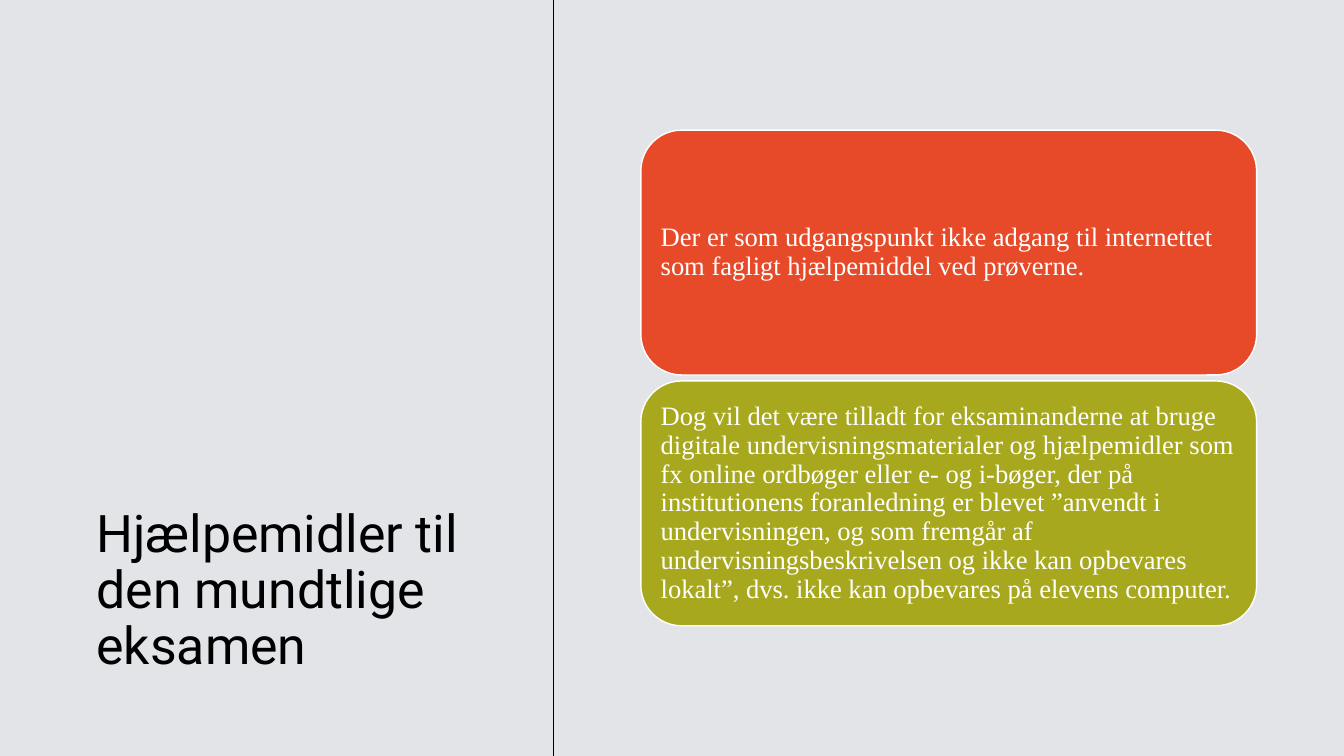
import pptx
import pptx.dml.color
import pptx.enum.shapes
import pptx.enum.text
import pptx.oxml.ns
import pptx.util
from lxml import etree
from pptx.util import Cm

COLOURS = {
    "background": "E2E4E8",
    "title": "000000",
    "divider": "000000",
    "rule": "E74A29",
    "exception": "A7A81E",
    "light": "FFFFFF",
}

STATEMENTS = [
    ("rule", "Der er som udgangspunkt ikke adgang til internettet som fagligt "
             "hjælpemiddel ved prøverne."),
    ("exception", "Dog vil det være tilladt for eksaminanderne at bruge digitale "
                  "undervisningsmaterialer og hjælpemidler som fx online ordbøger "
                  "eller e- og i-bøger, der på institutionens foranledning er blevet "
                  "”anvendt i undervisningen, og som fremgår af "
                  "undervisningsbeskrivelsen og ikke kan opbevares lokalt”, dvs. "
                  "ikke kan opbevares på elevens computer."),
]

SLIDE_WIDTH, SLIDE_HEIGHT = Cm(33.87), Cm(19.05)
CARD_LEFT, CARD_TOP = Cm(16.15), Cm(3.28)
CARD_WIDTH, CARD_HEIGHT = Cm(15.52), Cm(6.17)
CARD_GAP = Cm(0.15)
CARD_INSET = Cm(0.2)


def colour(name):
    return pptx.dml.color.RGBColor.from_string(COLOURS[name])


def write(frame, text, font_name, size, colour_name, anchor):
    """Fill a text frame with one left-aligned paragraph."""
    frame.text = text
    frame.word_wrap = True
    frame.auto_size = pptx.enum.text.MSO_AUTO_SIZE.NONE
    frame.vertical_anchor = anchor
    paragraph = frame.paragraphs[0]
    paragraph.alignment = pptx.enum.text.PP_ALIGN.LEFT
    paragraph.line_spacing = 0.9
    font = paragraph.runs[0].font
    font.name = font_name
    font.size = pptx.util.Pt(size)
    font.color.rgb = colour(colour_name)


def place_title(slide, text):
    title = slide.shapes.title
    title.left, title.top = Cm(2.18), Cm(2.34)
    title.width, title.height = Cm(10.67), Cm(14.81)
    write(title.text_frame, text, "Roboto", 37, "title",
          pptx.enum.text.MSO_ANCHOR.BOTTOM)


def add_divider(slide, x):
    divider = slide.shapes.add_connector(
        pptx.enum.shapes.MSO_CONNECTOR.STRAIGHT, x, SLIDE_HEIGHT, x, 0)
    divider.line.color.rgb = colour("divider")
    divider.line.width = pptx.util.Pt(0.5)
    properties = divider._element.spPr
    etree.SubElement(properties, pptx.oxml.ns.qn("a:effectLst"))


def add_card(slide, top, fill, text):
    card = slide.shapes.add_shape(
        pptx.enum.shapes.MSO_SHAPE.ROUNDED_RECTANGLE,
        CARD_LEFT, top, CARD_WIDTH, CARD_HEIGHT)
    card.shadow.inherit = False
    card.fill.solid()
    card.fill.fore_color.rgb = colour(fill)
    card.line.color.rgb = colour("light")
    card.line.width = pptx.util.Pt(1)
    frame = card.text_frame
    frame.margin_left = frame.margin_right = CARD_INSET
    frame.margin_top = frame.margin_bottom = CARD_INSET
    write(frame, text, "Times New Roman", 19, "light",
          pptx.enum.text.MSO_ANCHOR.MIDDLE)


def main():
    presentation = pptx.Presentation()
    presentation.slide_width = SLIDE_WIDTH
    presentation.slide_height = SLIDE_HEIGHT
    slide = presentation.slides.add_slide(presentation.slide_layouts[5])
    slide.background.fill.solid()
    slide.background.fill.fore_color.rgb = colour("background")

    place_title(slide, "Hjælpemidler til den mundtlige eksamen")
    add_divider(slide, Cm(13.94))
    for row, (fill, text) in enumerate(STATEMENTS):
        add_card(slide, CARD_TOP + row * (CARD_HEIGHT + CARD_GAP), fill, text)

    presentation.save("out.pptx")


if __name__ == "__main__":
    main()
